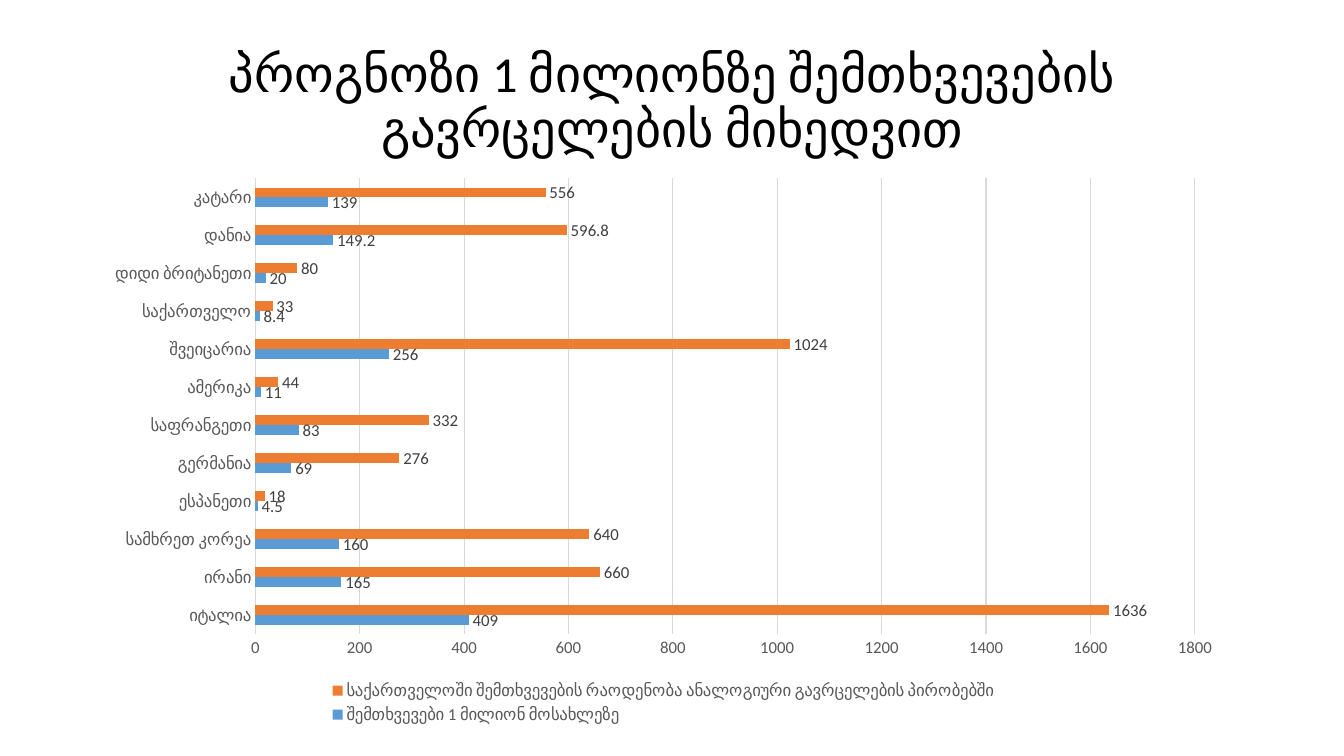
from dataclasses import dataclass

from pptx import Presentation
from pptx import util as u
from pptx.chart import data
from pptx.dml import color
from pptx.enum import chart as ch
from pptx.enum import text


@dataclass(frozen=True)
class Theme:
    font: str = "Calibri"
    title_size: int = 36
    chart_size: int = 12
    title: str = "000000"
    axis: str = "595959"
    label: str = "404040"
    grid: str = "D9D9D9"
    per_million: str = "5B9BD5"
    forecast: str = "ED7D31"


@dataclass(frozen=True)
class Box:
    left: float
    top: float
    width: float
    height: float

    def lengths(self):
        return [u.Pt(side) for side in (self.left, self.top, self.width, self.height)]


THEME = Theme()
TITLE = "პროგნოზი 1 მილიონზე შემთხვევების გავრცელების მიხედვით"
PER_MILLION = "შემთხვევები 1 მილიონ მოსახლეზე"
FORECAST = "საქართველოში შემთხვევების რაოდენობა ანალოგიური გავრცელების პირობებში"
COUNTRIES = [
    ("იტალია", 409, 1636),
    ("ირანი", 165, 660),
    ("სამხრეთ კორეა", 160, 640),
    ("ესპანეთი", 4.5, 18),
    ("გერმანია", 69, 276),
    ("საფრანგეთი", 83, 332),
    ("ამერიკა", 11, 44),
    ("შვეიცარია", 256, 1024),
    ("საქართველო", 8.4, 33),
    ("დიდი ბრიტანეთი", 20, 80),
    ("დანია", 149.2, 596.8),
    ("კატარი", 139, 556),
]


def style_font(font, size, shade):
    font.name = THEME.font
    font.size = u.Pt(size)
    font.color.rgb = color.RGBColor.from_string(shade)


def style_line(line):
    line.color.rgb = color.RGBColor.from_string(THEME.grid)
    line.width = u.Pt(0.75)


def place_title(page, box):
    title = page.shapes.title
    title.left, title.top, title.width, title.height = box.lengths()
    frame = title.text_frame
    frame.text = TITLE
    frame.word_wrap = True
    frame.auto_size = text.MSO_AUTO_SIZE.NONE
    frame.vertical_anchor = text.MSO_ANCHOR.MIDDLE
    para = frame.paragraphs[0]
    para.alignment = text.PP_ALIGN.CENTER
    para.line_spacing = 0.9
    style_font(para.runs[0].font, THEME.title_size, THEME.title)


def style_axes(chart):
    for axis in (chart.category_axis, chart.value_axis):
        axis.major_tick_mark = axis.minor_tick_mark = ch.XL_TICK_MARK.NONE
        style_font(axis.tick_labels.font, THEME.chart_size, THEME.axis)
    chart.category_axis.has_major_gridlines = False
    style_line(chart.category_axis.format.line)
    values = chart.value_axis
    values.minimum_scale, values.maximum_scale, values.major_unit = 0, 1800, 200
    values.format.line.fill.background()
    values.has_major_gridlines = True
    style_line(values.major_gridlines.format.line)


def style_bars(plot):
    plot.gap_width = 182
    plot.overlap = 0
    plot.vary_by_categories = False
    for series, shade in zip(plot.series, (THEME.per_million, THEME.forecast)):
        series.format.fill.solid()
        series.format.fill.fore_color.rgb = color.RGBColor.from_string(shade)
        series.invert_if_negative = False
        labels = series.data_labels
        labels.show_value = True
        labels.position = ch.XL_LABEL_POSITION.OUTSIDE_END
        style_font(labels.font, THEME.chart_size, THEME.label)


def place_chart(page, box):
    names, per_million, forecast = zip(*COUNTRIES)
    figures = data.CategoryChartData()
    figures.categories = names
    figures.add_series(PER_MILLION, per_million)
    figures.add_series(FORECAST, forecast)
    chart = page.shapes.add_chart(
        ch.XL_CHART_TYPE.BAR_CLUSTERED, *box.lengths(), figures
    ).chart
    style_font(chart.font, THEME.chart_size, THEME.axis)
    chart.has_title = False
    chart.has_legend = True
    chart.legend.position = ch.XL_LEGEND_POSITION.BOTTOM
    chart.legend.include_in_layout = False
    style_font(chart.legend.font, THEME.chart_size, THEME.axis)
    style_axes(chart)
    style_bars(chart.plots[0])


def main():
    deck = Presentation()
    deck.slide_width, deck.slide_height = u.Pt(960), u.Pt(540)
    page = deck.slides.add_slide(deck.slide_layouts.get_by_name("Title Only"))
    place_title(page, Box(66, 28.75, 828, 90.75))
    place_chart(page, Box(66, 119.5, 816, 401))
    deck.save("out.pptx")


if __name__ == "__main__":
    main()
